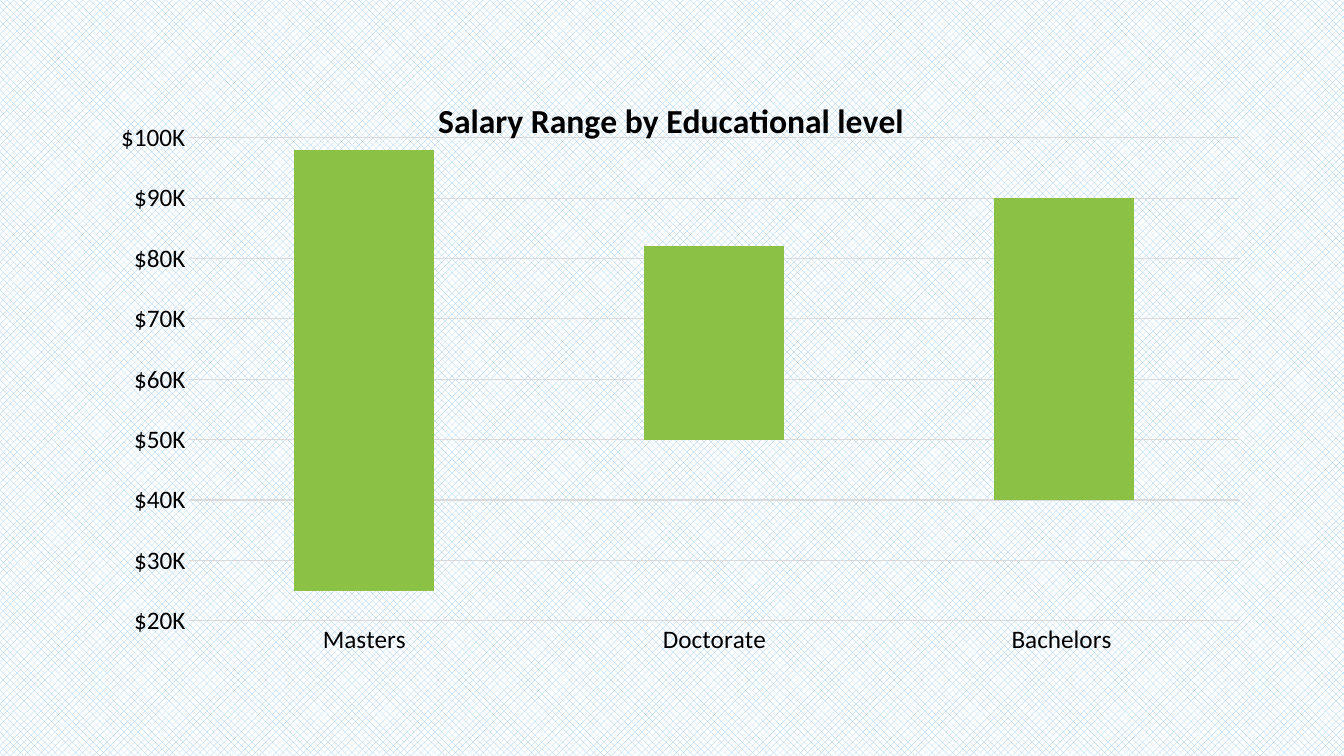
import pptx
import pptx.chart.data
import pptx.dml.color
import pptx.enum.chart
import pptx.enum.dml
import pptx.oxml
import pptx.oxml.ns
import pptx.util

TITLE = "Salary Range by Educational level "
# level, lowest salary, highest salary, in thousands of dollars
SALARY_RANGES = [
    ("Masters", 25, 98),
    ("Doctorate", 50, 82),
    ("Bachelors ", 40, 90),
]
SALARY_FORMAT = r'"$"#\K;\-"$"#\ \K'
SALARY_MIN, SALARY_MAX, SALARY_STEP = 20, 100, 10

SLIDE_PX = (1344, 756)
CHART_PX = (68, 74, 1214, 607)
PLOT_SHARE = {"x": 0.10, "y": 0.105, "w": 0.865, "h": 0.796}
EMU_PER_PX = pptx.util.Inches(1) / 100.8

FONT = "Calibri"
BLACK = pptx.dml.color.RGBColor(0x00, 0x00, 0x00)
WHITE = pptx.dml.color.RGBColor(0xFF, 0xFF, 0xFF)
GREY = pptx.dml.color.RGBColor(0xD9, 0xD9, 0xD9)
GREEN = pptx.dml.color.RGBColor(0x8B, 0xC1, 0x45)
PALE_BLUE = pptx.dml.color.RGBColor(0x94, 0xC8, 0xED)


def px(length):
    return pptx.util.Emu(round(length * EMU_PER_PX))


def set_font(font, size, bold=False):
    font.name = FONT
    font.size = pptx.util.Pt(size)
    font.bold = bold
    font.color.rgb = BLACK


def write_text(frame, text, **font_format):
    frame.text = text
    set_font(frame.paragraphs[0].runs[0].font, **font_format)


def draw_thin_line(line):
    line.color.rgb = GREY
    line.width = pptx.util.Pt(0.75)


def place_plot(chart):
    """Fix the inner plot area as shares of the chart's size."""
    plot_area = chart.element.xpath("c:chart/c:plotArea")[0]
    for old_layout in plot_area.xpath("c:layout"):
        plot_area.remove(old_layout)
    modes = "".join(f'<c:{side}Mode val="edge"/>' for side in "xy")
    shares = "".join(f'<c:{side} val="{share}"/>' for side, share in PLOT_SHARE.items())
    plot_area.insert(0, pptx.oxml.parse_xml(
        f'<c:layout {pptx.oxml.ns.nsdecls("c")}><c:manualLayout>'
        f'<c:layoutTarget val="inner"/>{modes}{shares}'
        '</c:manualLayout></c:layout>'))


def add_salary_chart(slide):
    salaries = pptx.chart.data.CategoryChartData()
    salaries.categories = [level for level, low, high in SALARY_RANGES]
    salaries.add_series("Series 1", [low for level, low, high in SALARY_RANGES])
    salaries.add_series("Series 2", [high - low for level, low, high in SALARY_RANGES])
    chart = slide.shapes.add_chart(
        pptx.enum.chart.XL_CHART_TYPE.COLUMN_STACKED,
        *map(px, CHART_PX), salaries).chart
    set_font(chart.font, 10)
    chart.has_legend = False
    chart.has_title = True
    write_text(chart.chart_title.text_frame, TITLE, size=24, bold=True)
    place_plot(chart)

    columns = chart.plots[0]
    columns.gap_width = 150
    columns.overlap = 100
    columns.vary_by_categories = False
    base, salary_span = columns.series
    base.format.fill.background()
    base.format.line.fill.background()
    salary_span.format.fill.solid()
    salary_span.format.fill.fore_color.rgb = GREEN

    levels, dollars = chart.category_axis, chart.value_axis
    for axis in (levels, dollars):
        axis.major_tick_mark = pptx.enum.chart.XL_TICK_MARK.NONE
        axis.minor_tick_mark = pptx.enum.chart.XL_TICK_MARK.NONE
        set_font(axis.tick_labels.font, 18)
    draw_thin_line(levels.format.line)
    dollars.format.line.fill.background()
    dollars.minimum_scale = SALARY_MIN
    dollars.maximum_scale = SALARY_MAX
    dollars.major_unit = SALARY_STEP
    dollars.has_major_gridlines = True
    draw_thin_line(dollars.major_gridlines.format.line)
    dollars.tick_labels.number_format = SALARY_FORMAT
    dollars.tick_labels.number_format_is_linked = False


def main():
    deck = pptx.Presentation()
    deck.slide_width, deck.slide_height = map(px, SLIDE_PX)
    slide = deck.slides.add_slide(deck.slide_layouts[6])
    backdrop = slide.background.fill
    backdrop.patterned()
    backdrop.pattern = pptx.enum.dml.MSO_PATTERN.PERCENT_50
    backdrop.fore_color.rgb = PALE_BLUE
    backdrop.back_color.rgb = WHITE
    add_salary_chart(slide)
    deck.save("out.pptx")


if __name__ == "__main__":
    main()
